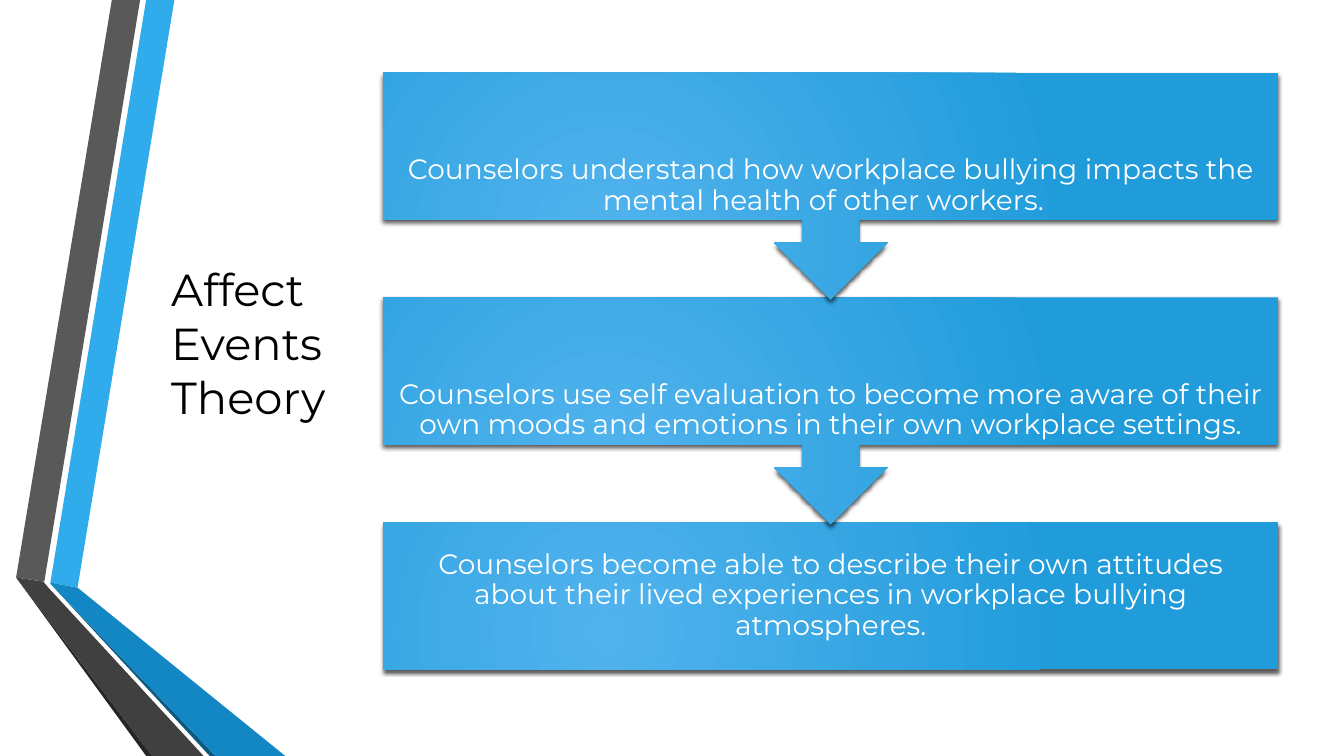
from lxml import etree
from pptx import Presentation
from pptx.dml.color import RGBColor as Rgb
from pptx.enum.shapes import MSO_SHAPE as Shape
from pptx.enum.text import MSO_ANCHOR as Anchor, PP_ALIGN as Align
from pptx.oxml import parse_xml
from pptx.util import Inches, Pt

COLORS = {
    "text": "000000", "white": "FFFFFF", "glow": "51B3ED", "blue": "219CDB",
    "sky": "30ACEC", "gray": "595959", "black": "262626",
    "navy": "0C5A82", "ocean": "1287C3", "coal": "404040",
}
NS = "http://schemas.openxmlformats.org/drawingml/2006/main"

RIBBONS = [
    ("sky", [(0.5, 5.78), (0.77, 5.83), (1.73, 0), (1.45, 0)]),
    ("gray", [(1.39, 0), (1.11, 0), (0.16, 5.73), (0.44, 5.77)]),
    ("black", [(0.16, 5.73), (1.45, 7.5), (1.51, 7.5)]),
    ("navy", [(0.5, 5.79), (2.08, 7.5), (2.14, 7.5)]),
    ("ocean", [(0.5, 5.79), (2.14, 7.5), (2.83, 7.5), (0.77, 5.83), (0.5, 5.78)]),
    ("coal", [(2.02, 7.5), (0.48, 5.83), (0.43, 5.77), (0.16, 5.73), (1.51, 7.5)]),
]
TITLE = ["Affect", "Events", "Theory"]
STEPS = [
    "Counselors understand how workplace bullying impacts the mental health "
    "of other workers.  ",
    "Counselors use self evaluation to become more aware of their own moods "
    "and emotions in their own workplace settings.",
    "Counselors become able to describe their own attitudes about their lived "
    "experiences in workplace bullying atmospheres.",
]
LEFT, TOP, WIDTH, PITCH = 3.8, 0.72, 8.88, 2.23
CALL_H, LAST_H = 2.25, 1.46


class Deck:
    font = "Montserrat"

    def __init__(self, slide):
        self.shapes = slide.shapes

    def ribbon(self, color, points):
        dots = [(Inches(x), Inches(y)) for x, y in points]
        pen = self.shapes.build_freeform(*dots[0])
        pen.add_line_segments(dots[1:], close=True)
        form = pen.convert_to_shape()
        form.shadow.inherit = False
        form.fill.solid()
        form.fill.fore_color.rgb = Rgb.from_string(COLORS[color])
        form.line.fill.background()

    def block(self, kind, box, turn=0):
        """Add a shape with a radial glow and a soft shadow below it."""
        form = self.shapes.add_shape(kind, *map(Inches, box))
        form.rotation = turn
        form.line.fill.background()
        form.shadow.inherit = False
        props = form._element.spPr
        glow = parse_xml(
            f'<a:gradFill xmlns:a="{NS}" rotWithShape="0"><a:gsLst>'
            f'<a:gs pos="0"><a:srgbClr val="{COLORS["glow"]}"/></a:gs>'
            f'<a:gs pos="100000"><a:srgbClr val="{COLORS["blue"]}"/></a:gs>'
            '</a:gsLst><a:path path="circle"><a:fillToRect l="50000" '
            't="100000" r="100000" b="50000"/></a:path></a:gradFill>')
        props.find(f"{{{NS}}}prstGeom").addnext(glow)
        shade = etree.SubElement(
            props.find(f"{{{NS}}}effectLst"), f"{{{NS}}}outerShdw",
            blurRad=str(Pt(3)), dist=str(Pt(2)), dir="5400000", rotWithShape="0")
        tint = etree.SubElement(shade, f"{{{NS}}}srgbClr", val=COLORS["text"])
        etree.SubElement(tint, f"{{{NS}}}alpha", val="64000")

    def text(self, box, lines, size, color, align, inset=(0.1, 0.05), space=1.0):
        frame = self.shapes.add_textbox(*map(Inches, box)).text_frame
        frame.word_wrap = True
        frame.vertical_anchor = Anchor.MIDDLE
        frame.margin_left = frame.margin_right = Inches(inset[0])
        frame.margin_top = frame.margin_bottom = Inches(inset[1])
        para = frame.paragraphs[0]
        para.alignment = align
        para.line_spacing = space
        for i, line in enumerate(lines):
            if i:
                para.add_line_break()
            run = para.add_run()
            run.text = line
            run.font.name = self.font
            run.font.size = Pt(size)
            run.font.color.rgb = Rgb.from_string(COLORS[color])


def main():
    prs = Presentation()
    prs.slide_width, prs.slide_height = Inches(13.33), Inches(7.5)
    deck = Deck(prs.slides.add_slide(prs.slide_layouts[6]))
    for color, points in RIBBONS:
        deck.ribbon(color, points)
    deck.text((1.6, 2.39, 2.39, 2.02), TITLE, 32, "text", Align.LEFT)

    # The last step lies at the back, so each arrow tip covers the next block
    for i, step in reversed(list(enumerate(STEPS))):
        last = i == len(STEPS) - 1
        box = (LEFT, TOP + i * PITCH, WIDTH, LAST_H if last else CALL_H)
        if last:
            deck.block(Shape.RECTANGLE, box)
        else:
            deck.block(Shape.UP_ARROW_CALLOUT, box, turn=180)
        deck.text(box, [step], 20, "white", Align.CENTER, (0.14, 0.16), 0.9)
    prs.save("out.pptx")


if __name__ == "__main__":
    main()
